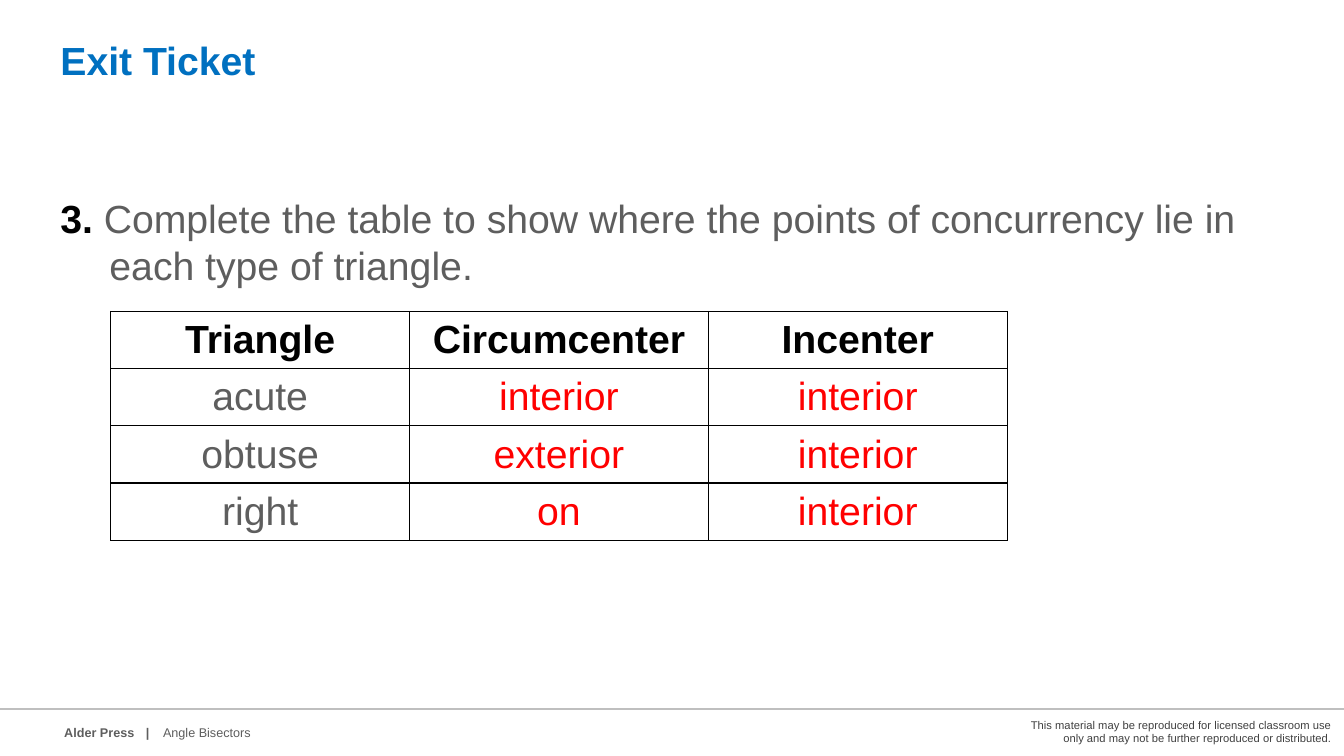
from lxml import etree
from pptx import Presentation
from pptx.dml.color import RGBColor
from pptx.enum.shapes import MSO_CONNECTOR
from pptx.enum.text import MSO_ANCHOR, MSO_AUTO_SIZE, PP_ALIGN
from pptx.oxml import parse_xml
from pptx.oxml.ns import nsdecls, qn
from pptx.util import Cm, Pt

TOP, MIDDLE = MSO_ANCHOR.TOP, MSO_ANCHOR.MIDDLE
LEFT, CENTER, RIGHT = PP_ALIGN.LEFT, PP_ALIGN.CENTER, PP_ALIGN.RIGHT
STRAIGHT = MSO_CONNECTOR.STRAIGHT
NO_AUTOFIT = MSO_AUTO_SIZE.NONE

# Content
TITLE = "Exit Ticket"
QUESTION = [
    ("3. ", "black", True),
    ("Complete the table to show where the points of concurrency lie in "
     "each type of triangle.", "grey", False),
]
TABLE = [
    ("Triangle", "Circumcenter", "Incenter"),
    ("acute", "interior", "interior"),
    ("obtuse", "exterior", "interior"),
    ("right", "on", "interior"),
]
# Text, box in cm, size, colour, bold, alignment, anchor
FOOTER = [
    ("Alder Press\t|", (1.37, 18.14, 2.87, 0.91), 9, "grey", True, LEFT, TOP),
    ("Angle Bisectors", (3.86, 18.14, 13.03, 0.91), 9, "grey", False, LEFT, TOP),
    ("This material may be reproduced for licensed classroom use only and "
     "may not be further reproduced or distributed.",
     (25.17, 17.78, 8.64, 1.32), 8, "dark", False, RIGHT, MIDDLE),
]
COLORS = {"black": "000000", "grey": "5E5E5E", "dark": "404040",
          "blue": "0070C0", "red": "FF0000", "rule": "BFBFBF"}
FONT = "Arial"
BODY_SIZE = 28
SLIDE_W, SLIDE_H = 33.87, 19.05
RULE_Y = 17.86
TABLE_LEFT, TABLE_TOP = 2.79, 7.85
COL_W, ROW_H = 7.53, 1.4


def color(name):
    return RGBColor.from_string(COLORS[name])


def style(r, size, name, bold):
    r.font.name = FONT
    r.font.size = Pt(size)
    r.font.color.rgb = color(name)
    r.font.bold = bold


def add_box(slide, box, anchor=TOP):
    tf = slide.shapes.add_textbox(*map(Cm, box)).text_frame
    tf.word_wrap = True
    tf.vertical_anchor = anchor
    return tf


def add_borders(cell):
    tc_pr = cell._tc.get_or_add_tcPr()
    for i, side in enumerate(("lnL", "lnR", "lnT", "lnB")):
        tc_pr.insert(i, parse_xml(
            f'<a:{side} {nsdecls("a")} w="{Pt(1)}"><a:solidFill>'
            f'<a:srgbClr val="{COLORS["black"]}"/></a:solidFill></a:{side}>'))


prs = Presentation()
prs.slide_width, prs.slide_height = Cm(SLIDE_W), Cm(SLIDE_H)
s = prs.slides.add_slide(prs.slide_layouts[5])

# Footer rule and text
rule = s.shapes.add_connector(STRAIGHT, 0, Cm(RULE_Y), Cm(SLIDE_W), Cm(RULE_Y))
rule.line.color.rgb = color("rule")
rule.line.width = Pt(1.75)
etree.SubElement(rule._element.spPr, qn("a:effectLst"))

for text, box, size, name, bold, align, anchor in FOOTER:
    p = add_box(s, box, anchor).paragraphs[0]
    p.text = text
    p.alignment = align
    if "\t" in text:
        p._p.get_or_add_pPr().append(parse_xml(
            f'<a:tabLst {nsdecls("a")}><a:tab pos="{Cm(2.06)}" algn="l"/></a:tabLst>'))
    for r in p.runs:
        style(r, size, name, bold)

# Title
title = s.shapes.title
title.left, title.top, title.width, title.height = map(Cm, (1.27, 0.91, 19.3, 3.58))
tf = title.text_frame
tf.text = TITLE
tf.auto_size = NO_AUTOFIT
tf.vertical_anchor = TOP
p = tf.paragraphs[0]
p.alignment = LEFT
p.line_spacing = 0.9
style(p.runs[0], BODY_SIZE, "blue", True)

# Question with a hanging indent
p = add_box(s, (1.27, 4.78, 30.89, 12.85)).paragraphs[0]
p_pr = p._p.get_or_add_pPr()
p_pr.set("marL", str(Cm(1.24)))
p_pr.set("indent", str(-Cm(1.24)))
for text, name, bold in QUESTION:
    r = p.add_run()
    r.text = text
    style(r, BODY_SIZE, name, bold)

# Table: black header, grey triangle types, red answers
rows, cols = len(TABLE), len(TABLE[0])
table = s.shapes.add_table(rows, cols, Cm(TABLE_LEFT), Cm(TABLE_TOP),
                           Cm(COL_W * cols), Cm(ROW_H * rows)).table
table.horz_banding = False
for column in table.columns:
    column.width = Cm(COL_W)
for i, row in enumerate(TABLE):
    table.rows[i].height = Cm(ROW_H)
    for j, text in enumerate(row):
        cell = table.cell(i, j)
        cell.fill.background()
        cell.vertical_anchor = MIDDLE
        add_borders(cell)
        p = cell.text_frame.paragraphs[0]
        p.text = text
        p.alignment = CENTER
        name = "black" if i == 0 else "grey" if j == 0 else "red"
        style(p.runs[0], BODY_SIZE, name, i == 0)

prs.save("out.pptx")
